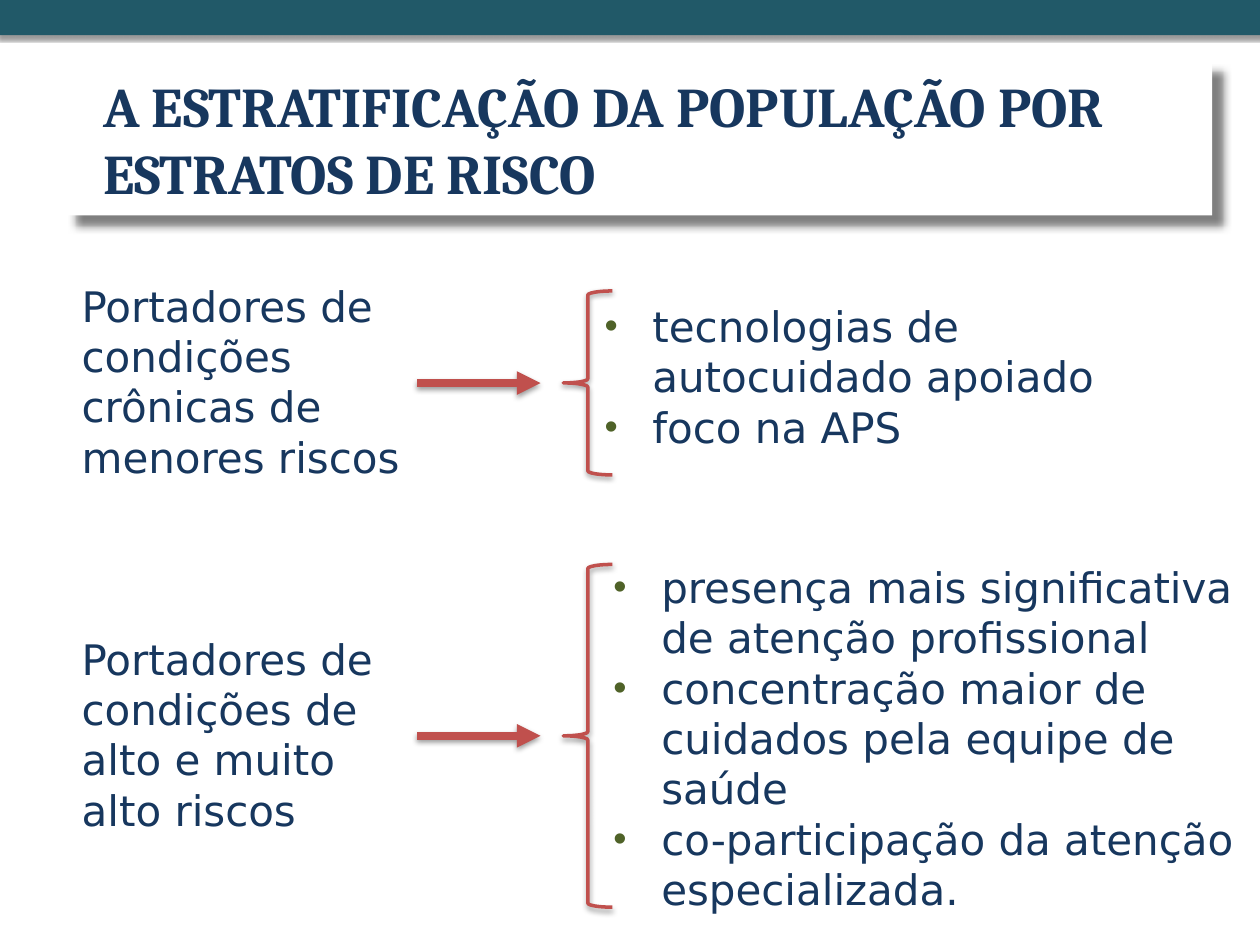
from dataclasses import dataclass

from lxml.etree import SubElement
from pptx import Presentation
from pptx.dml.color import RGBColor
from pptx.enum.shapes import MSO_CONNECTOR, MSO_SHAPE
from pptx.enum.text import MSO_ANCHOR, PP_ALIGN
from pptx.oxml.ns import qn
from pptx.util import Inches, Pt


@dataclass(frozen=True)
class Theme:
    """Colours, fonts and sizes of the slide."""
    bar: str = "215968"
    paper: str = "FFFFFF"
    ink: str = "17375E"
    accent: str = "C0504D"
    bullet: str = "4F6228"
    shade: str = "000000"
    head: str = "Cambria"
    body: str = "DejaVu Sans"
    title: int = 32
    text: int = 24
    thin: float = 2
    thick: float = 4.5


THEME = Theme()

ROWS = [
    ((0.55, 2.31, 9.31, 1.46), 4.7, 1.41,
     "Portadores de condições crônicas de menores riscos",
     ["tecnologias de autocuidado apoiado", "foco na APS"]),
    ((0.55, 4.48, 9.38, 2.72), 4.77, 2.87,
     "Portadores de condições de alto e muito alto riscos",
     ["presença mais significativa de atenção profissional",
      "concentração maior de cuidados pela equipe de saúde",
      "co-participação da atenção especializada."]),
]


def color(code):
    """Turn a hex code into a colour."""
    return RGBColor.from_string(code)


def node(parent, tag, **attrs):
    """Add an XML child with the given attributes."""
    return SubElement(parent, qn(tag), {k: str(v) for k, v in attrs.items()})


def shade(shape, alpha, blur, dist, angle):
    """Give a shape or line an outer shadow."""
    effects = node(shape.element.spPr, "a:effectLst")
    outer = node(effects, "a:outerShdw", blurRad=Pt(blur), dist=Pt(dist),
                 dir=angle * 60000, algn="ctr", rotWithShape=0)
    tint = node(outer, "a:srgbClr", val=THEME.shade)
    node(tint, "a:alpha", val=alpha * 1000)


def style(frame, font, size, bold=False):
    """Wrap a text frame and format its runs."""
    frame.word_wrap = True
    for para in frame.paragraphs:
        para.alignment = PP_ALIGN.LEFT
        for run in para.runs:
            run.font.name = font
            run.font.size = Pt(size)
            run.font.bold = bold
            run.font.color.rgb = color(THEME.ink)


def panel(slide, box, fill):
    """Draw a plain filled rectangle."""
    shape = slide.shapes.add_shape(MSO_SHAPE.RECTANGLE, *map(Inches, box))
    shape.fill.solid()
    shape.fill.fore_color.rgb = color(fill)
    shape.line.fill.background()
    return shape


def banner(slide, box):
    """Draw the bar along the top edge."""
    shade(panel(slide, box, THEME.bar), 40, 2, 2, 90)


def heading(slide, box, text):
    """Draw the raised title panel."""
    shape = panel(slide, box, THEME.paper)
    shade(shape, 50, 5, 8.5, 45)
    frame = shape.text_frame
    frame.text = text
    frame.vertical_anchor = MSO_ANCHOR.MIDDLE
    style(frame, THEME.head, THEME.title, True)
    frame.paragraphs[0]._p.get_or_add_pPr().set("marL", str(Inches(0.2)))


def note(slide, box, lines):
    """Place body text, one paragraph a line."""
    shape = slide.shapes.add_textbox(*map(Inches, box))
    shape.text_frame.text = "\n".join(lines)
    style(shape.text_frame, THEME.body, THEME.text)
    return shape


def dots(frame):
    """Put bullets before all paragraphs."""
    for para in frame.paragraphs:
        props = para._p.get_or_add_pPr()
        props.set("marL", str(Inches(0.38)))
        props.set("indent", str(-Inches(0.38)))
        node(node(props, "a:buClr"), "a:srgbClr", val=THEME.bullet)
        node(props, "a:buSzPct", val=90000)
        node(props, "a:buFont", typeface="Arial")
        node(props, "a:buChar", char="•")


def stroke(shape, width):
    """Set the accent line and its shadow."""
    shape.line.color.rgb = color(THEME.accent)
    shape.line.width = Pt(width)
    shade(shape, 38, 3.1, 1.6, 90)


def row(slide, box, start, tall, label, items):
    """Place a label, arrow, brace and list about one middle line."""
    left, top, width, height = box
    mid = top + height / 2
    points = note(slide, (start, mid - tall / 2, left + width - start, tall),
                  items)
    dots(points.text_frame)
    group = note(slide, (left, mid - 1.73 / 2, 2.76, 1.73), [label])

    brace = slide.shapes.add_shape(
        MSO_SHAPE.LEFT_BRACE,
        *map(Inches, (left + 3.92, top, 0.39, height)))
    brace.fill.background()
    stroke(brace, THEME.thin)

    arrow = slide.shapes.add_connector(
        MSO_CONNECTOR.STRAIGHT,
        *map(Inches, (left + 2.76, mid, left + 3.74, mid)))
    arrow.begin_connect(group, 3)
    stroke(arrow, THEME.thick)
    node(arrow.line._get_or_add_ln(), "a:tailEnd", type="triangle")


def main():
    """Build and save the slide."""
    deck = Presentation()
    deck.slide_width, deck.slide_height = Inches(10), Inches(7.5)
    slide = deck.slides.add_slide(deck.slide_layouts[6])
    banner(slide, (-0.02, 0, 10.04, 0.28))
    heading(slide, (0.52, 0.49, 9.1, 1.22),
            "A ESTRATIFICAÇÃO DA POPULAÇÃO POR ESTRATOS DE RISCO")
    for part in ROWS:
        row(slide, *part)
    deck.save("out.pptx")


if __name__ == "__main__":
    main()
